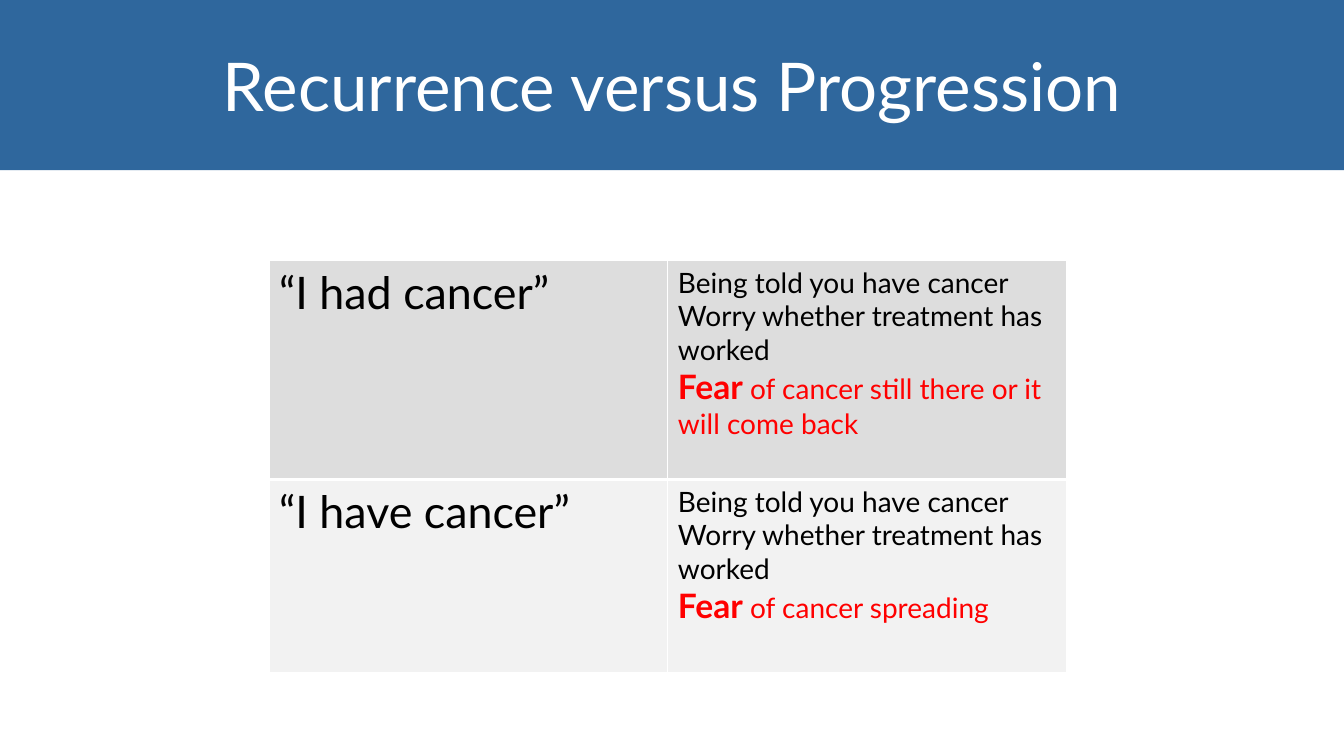
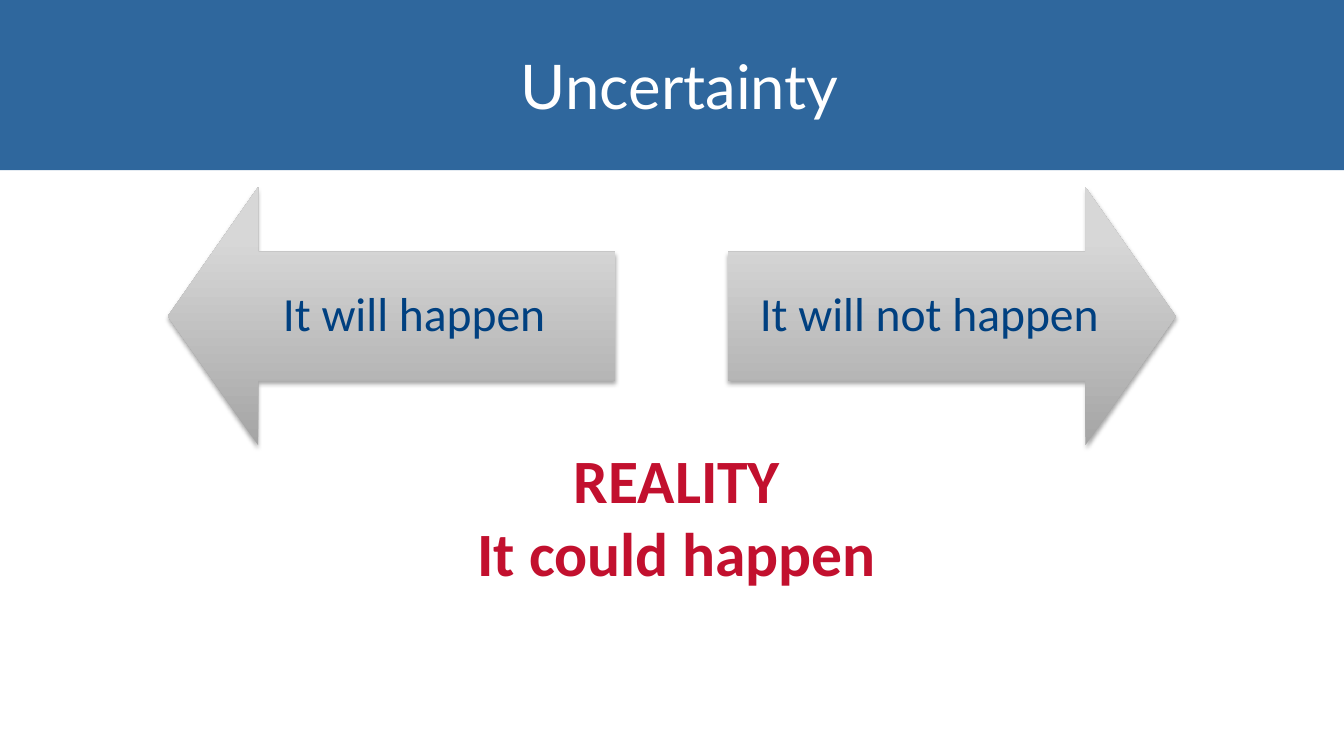
from dataclasses import dataclass

from lxml import etree
from pptx import Presentation
from pptx.dml.color import RGBColor
from pptx.enum.shapes import MSO_SHAPE
from pptx.enum.text import MSO_ANCHOR, PP_ALIGN
from pptx.oxml.ns import qn
from pptx.util import Cm, Pt

RECTANGLE = MSO_SHAPE.RECTANGLE
LEFT_ARROW = MSO_SHAPE.LEFT_ARROW
RIGHT_ARROW = MSO_SHAPE.RIGHT_ARROW
MIDDLE = MSO_ANCHOR.MIDDLE
LEFT = PP_ALIGN.LEFT
CENTER = PP_ALIGN.CENTER


@dataclass(frozen=True)
class Theme:
    band: str = "2F679D"
    white: str = "FFFFFF"
    black: str = "000000"
    fear: str = "FF0000"
    reality: str = "C2102E"
    arrow_text: str = "004080"
    arrow_dark: str = "A5A5A5"
    arrow_light: str = "D7D7D7"
    row_fills: tuple = ("DDDDDD", "F2F2F2")
    heading_font: str = "Lato"
    body_font: str = "Calibri"
    title_size: int = 48
    short_title_size: int = 44
    quote_size: int = 32
    detail_size: int = 20
    fear_size: int = 24
    arrow_size: int = 34
    reality_size: int = 44


THEME = Theme()
SLIDE_WIDTH, SLIDE_HEIGHT = Cm(33.87), Cm(19.05)
BAND_HEIGHT = Cm(4.29)

CONCERNS = ("Being told you have cancer", "Worry whether treatment has worked")
COMPARISON = (
    ("“I had cancer”", " of cancer still there or it will come back"),
    ("“I have cancer”", " of cancer spreading"),
)


def style_span(span, size, color, name, bold=False):
    span.font.size = Pt(size)
    span.font.color.rgb = RGBColor.from_string(color)
    span.font.name = name
    span.font.bold = bold


def write(frame, text, size, color, name, bold=False, align=CENTER):
    frame.word_wrap = True
    frame.text = text
    for para in frame.paragraphs:
        para.alignment = align
        for span in para.runs:
            style_span(span, size, color, name, bold)


def add_title_band(page, title, size, indent=Cm(0.25)):
    band = page.shapes.add_shape(RECTANGLE, 0, 0, SLIDE_WIDTH, BAND_HEIGHT)
    band.shadow.inherit = False
    band.fill.solid()
    band.fill.fore_color.rgb = RGBColor.from_string(THEME.band)
    band.line.fill.background()
    frame = band.text_frame
    frame.vertical_anchor = MIDDLE
    frame.margin_left = indent
    write(frame, title, size, THEME.white, THEME.heading_font)


def add_cell_borders(cell, bottom_width):
    properties = cell._tc.get_or_add_tcPr()
    sides = (("lnL", 1), ("lnR", 1), ("lnT", 1), ("lnB", bottom_width))
    for index, (side, width) in enumerate(sides):
        border = etree.Element(qn(f"a:{side}"), w=str(Pt(width)))
        fill = etree.SubElement(border, qn("a:solidFill"))
        etree.SubElement(fill, qn("a:srgbClr"), val=THEME.white)
        properties.insert(index, border)


def write_concerns(frame, fear):
    write(frame, "\n".join(CONCERNS), THEME.detail_size, THEME.black,
          THEME.heading_font, align=LEFT)
    para = frame.add_paragraph()
    for text, size, bold in (("Fear", THEME.fear_size, True),
                             (fear, THEME.detail_size, False)):
        span = para.add_run()
        span.text = text
        style_span(span, size, THEME.fear, THEME.heading_font, bold)


def add_comparison_table(page, left, top, width, row_heights):
    table = page.shapes.add_table(
        len(COMPARISON), 2, left, top, width, sum(row_heights)).table
    table.first_row = False
    table.horz_banding = False
    for row, (quote, fear) in enumerate(COMPARISON):
        table.rows[row].height = row_heights[row]
        quote_cell, concern_cell = table.cell(row, 0), table.cell(row, 1)
        write(quote_cell.text_frame, quote, THEME.quote_size, THEME.black,
              THEME.heading_font, align=LEFT)
        write_concerns(concern_cell.text_frame, fear)
        for cell in (quote_cell, concern_cell):
            cell.fill.solid()
            cell.fill.fore_color.rgb = RGBColor.from_string(THEME.row_fills[row])
            add_cell_borders(cell, 3 if row == 0 else 1)


def add_soft_shadow(shape):
    shape.shadow.inherit = False
    effects = shape.element.spPr.find(qn("a:effectLst"))
    shadow = etree.SubElement(
        effects, qn("a:outerShdw"), blurRad=str(Pt(3.1)), dist=str(Pt(1.8)),
        dir="5400000", rotWithShape="0")
    color = etree.SubElement(shadow, qn("a:srgbClr"), val=THEME.black)
    etree.SubElement(color, qn("a:alpha"), val="35000")


def add_outcome_arrow(page, kind, text, left, top, width, height):
    arrow = page.shapes.add_shape(kind, left, top, width, height)
    arrow.adjustments[0] = 0.5
    arrow.adjustments[1] = 0.35
    arrow.fill.gradient()
    arrow.fill.gradient_angle = 90
    stops = arrow.fill.gradient_stops
    for stop, position, color in zip(
            stops, (0, 0.8), (THEME.arrow_dark, THEME.arrow_light)):
        stop.position = position
        stop.color.rgb = RGBColor.from_string(color)
    arrow.line.fill.background()
    add_soft_shadow(arrow)
    frame = arrow.text_frame
    frame.vertical_anchor = MIDDLE
    frame.margin_left = frame.margin_right = Cm(0.66)
    frame.margin_top = frame.margin_bottom = Cm(0.66)
    write(frame, text, THEME.arrow_size, THEME.arrow_text, THEME.body_font)
    frame.paragraphs[0].line_spacing = 0.9


def add_arrow_pair(page, left, top, width, height):
    arrow_width = Cm(11.28)
    add_outcome_arrow(page, LEFT_ARROW, "It will happen",
                      left, top, arrow_width, height)
    add_outcome_arrow(page, RIGHT_ARROW, "It will not happen",
                      left + width - arrow_width, top, arrow_width, height)


def add_reality(page, left, top, width, height):
    box = page.shapes.add_textbox(left, top, width, height)
    write(box.text_frame, "REALITY\nIt could happen", THEME.reality_size,
          THEME.reality, THEME.body_font, bold=True)


def build_comparison_page(page):
    add_title_band(page, "Recurrence versus Progression", THEME.title_size)
    add_comparison_table(page, Cm(6.78), Cm(6.56), Cm(20.1),
                         (Cm(5.52), Cm(4.87)))


def build_uncertainty_page(page):
    add_arrow_pair(page, Cm(4.23), Cm(4.72), Cm(25.4), Cm(6.5))
    add_reality(page, Cm(11.63), Cm(11), Cm(10.87), Cm(4.01))
    add_title_band(page, "Uncertainty", THEME.short_title_size, Cm(0.65))


def main():
    deck = Presentation()
    deck.slide_width, deck.slide_height = SLIDE_WIDTH, SLIDE_HEIGHT
    blank = deck.slide_layouts[6]
    for build in (build_comparison_page, build_uncertainty_page):
        build(deck.slides.add_slide(blank))
    deck.save("out.pptx")


if __name__ == "__main__":
    main()
